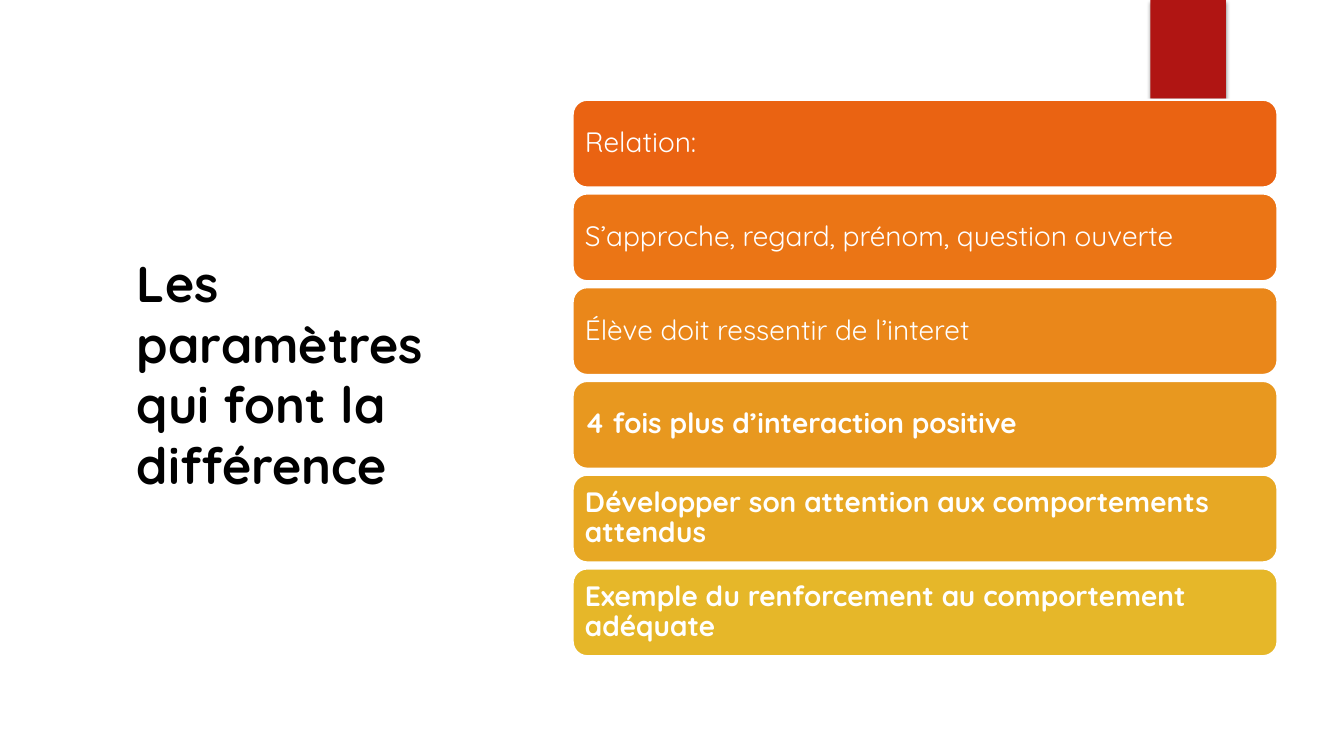
from lxml.etree import SubElement as Sub
from pptx import Presentation
from pptx.dml.color import RGBColor as RGB
from pptx.enum.shapes import MSO_SHAPE as Kind
from pptx.enum.text import MSO_ANCHOR as Anchor, PP_ALIGN as Align
from pptx.oxml.ns import qn
from pptx.util import Inches, Pt

BARS = [
    ("Relation:", "EA6312", False),
    ("S’approche, regard, prénom, question ouverte", "EB7515", False),
    ("Élève doit ressentir de l’interet", "EA871A", False),
    ("4 fois plus d’interaction positive", "E8981F", True),
    ("Développer son attention aux comportements attendus", "E7A824", True),
    ("Exemple du renforcement au comportement adéquate", "E6B729", True),
]
TOP, STEP = 0.99, 0.93


def color(target, code):
    """Set a colour object from a hex string."""
    target.rgb = RGB.from_string(code)


def write(frame, text, size=20, code="FFFFFF", bold=False, inset=0.08, space=1.0):
    """Put one left-aligned paragraph in a text frame."""
    frame.word_wrap = True
    frame.vertical_anchor = Anchor.MIDDLE
    frame.margin_left = frame.margin_right = Inches(inset)
    frame.margin_top = frame.margin_bottom = Inches(inset)
    para = frame.paragraphs[0]
    para.alignment = Align.LEFT
    para.line_spacing = space
    run = para.add_run()
    run.text = text
    run.font.name = "Quicksand"
    run.font.size = Pt(size)
    run.font.bold = bold
    color(run.font.color, code)


def block(slide, kind, box, fill):
    """Add a filled shape without outline or shadow."""
    shape = slide.shapes.add_shape(kind, *map(Inches, box))
    shape.shadow.inherit = False
    shape.fill.solid()
    color(shape.fill.fore_color, fill)
    shape.line.fill.background()
    return shape


def shade(shape):
    """Give a shape a soft shadow below it."""
    effects = shape.element.spPr.find(qn("a:effectLst"))
    outer = Sub(effects, qn("a:outerShdw"), blurRad=str(Pt(3)), dist=str(Pt(2)),
                dir="5400000", rotWithShape="0")
    tint = Sub(outer, qn("a:srgbClr"), val="000000")
    Sub(tint, qn("a:alpha"), val="45000")


def title(slide, text):
    """Add the slide title at the left."""
    box = slide.shapes.add_textbox(*map(Inches, (1.26, 1.06, 3.22, 5.29)))
    write(box.text_frame, text, size=36, code="000000", bold=True, inset=0.1)


def bar(slide, top, text, fill, bold):
    """Add one rounded bar with its label."""
    shape = block(slide, Kind.ROUNDED_RECTANGLE, (5.68, top, 6.99, 0.87), fill)
    color(shape.line.color, "FFFFFF")
    shape.line.width = Pt(1.5)
    write(shape.text_frame, text, bold=bold, space=0.9)


def main():
    """Build the slide and save it."""
    deck = Presentation()
    deck.slide_width, deck.slide_height = Inches(13.33), Inches(7.5)
    slide = deck.slides.add_slide(deck.slide_layouts[6])
    shade(block(slide, Kind.RECTANGLE, (11.41, 0, 0.75, 0.98), "B01513"))
    title(slide, "Les paramètres qui font la différence")
    for row, (text, fill, bold) in enumerate(BARS):
        bar(slide, TOP + row * STEP, text, fill, bold)
    deck.save("out.pptx")


if __name__ == "__main__":
    main()
